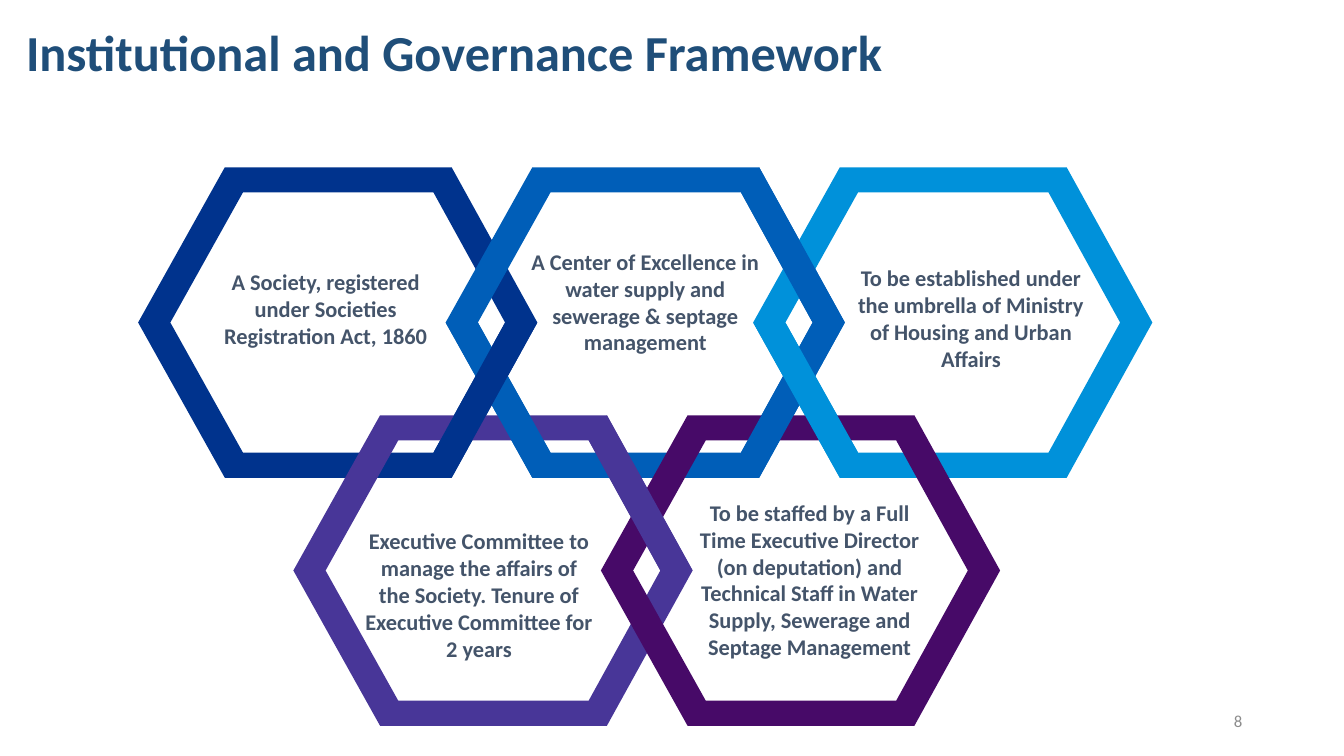
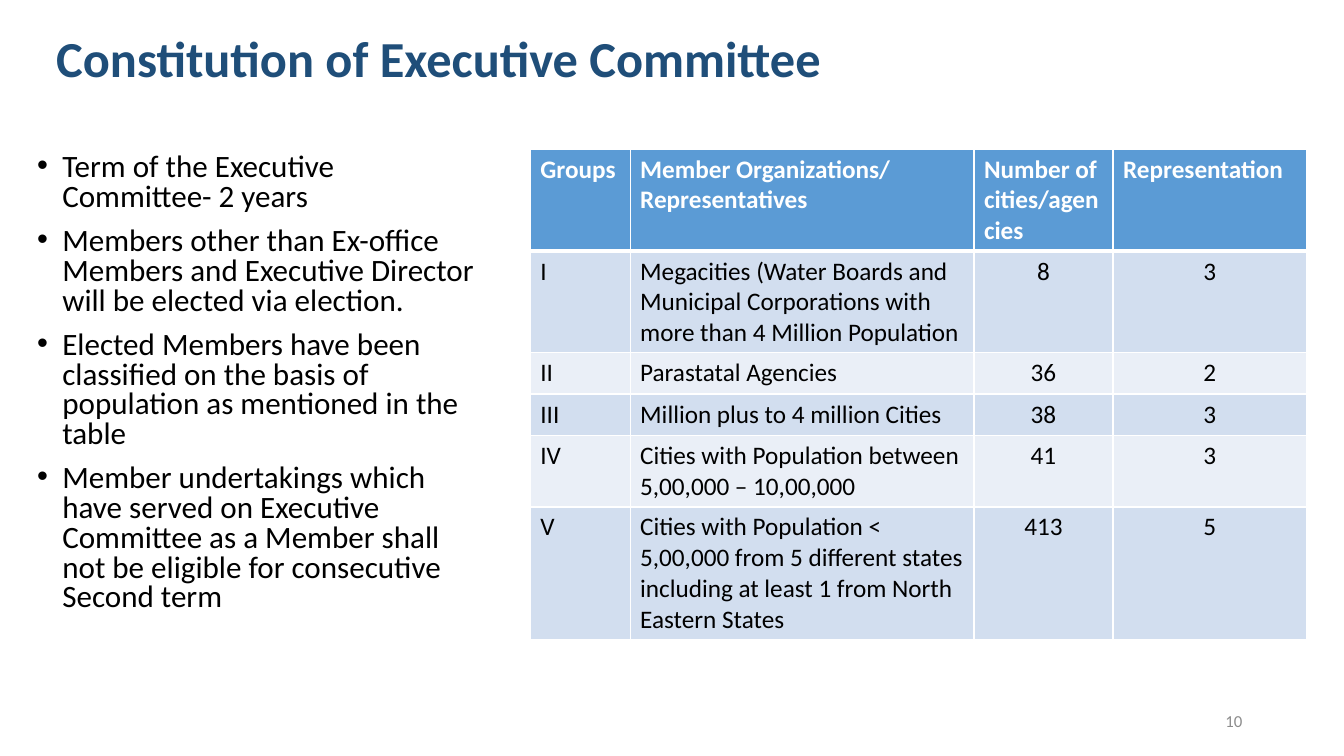
from lxml import etree
from pptx import Presentation
from pptx.dml.color import RGBColor
from pptx.enum import text as t
from pptx.oxml import ns
from pptx.util import Inches, Pt

FONT = "Calibri"
WHITE = RGBColor(0xFF, 0xFF, 0xFF)
BLACK = RGBColor(0x00, 0x00, 0x00)
TITLE_BLUE = RGBColor(0x1F, 0x4E, 0x79)
SLATE = RGBColor(0x44, 0x54, 0x6A)
GRAY = RGBColor(0x8C, 0x8C, 0x8C)
HEADER_BLUE = RGBColor(0x5B, 0x9B, 0xD5)
BAND_DARK = RGBColor(0xD2, 0xDE, 0xEF)
BAND_LIGHT = RGBColor(0xEA, 0xEF, 0xF7)
NAVY = RGBColor(0x00, 0x33, 0x8D)
BLUE = RGBColor(0x00, 0x5E, 0xB8)
SKY = RGBColor(0x00, 0x91, 0xDA)
VIOLET = RGBColor(0x48, 0x36, 0x98)
PURPLE = RGBColor(0x47, 0x0A, 0x68)

LEFT, CENTER, RIGHT = t.PP_ALIGN.LEFT, t.PP_ALIGN.CENTER, t.PP_ALIGN.RIGHT
TOP, MIDDLE = t.MSO_ANCHOR.TOP, t.MSO_ANCHOR.MIDDLE

OUTER = [(0, 1.54), (0.86, 0), (3.11, 0), (3.96, 1.54), (3.11, 3.08), (0.86, 3.08)]
INNER = [(0.32, 1.54), (1.04, 0.25), (2.93, 0.25), (3.64, 1.54), (2.93, 2.83), (1.04, 2.83)]
UPPER_RIGHT, LOWER_RIGHT, LOWER_LEFT = 2, 3, 5

RING_STEP = 3.05
UPPER_ROW = (1.37, 1.66)
LOWER_ROW = (2.91, 4.12)
RINGS = {
    "society": (UPPER_ROW, 0, NAVY),
    "center": (UPPER_ROW, 1, BLUE),
    "ministry": (UPPER_ROW, 2, SKY),
    "committee": (LOWER_ROW, 0, VIOLET),
    "staff": (LOWER_ROW, 1, PURPLE),
}
FRONT_SIDES = [
    ("center", LOWER_LEFT),
    ("society", LOWER_RIGHT),
    ("center", LOWER_RIGHT),
    ("ministry", LOWER_LEFT),
    ("committee", UPPER_RIGHT),
    ("center", UPPER_RIGHT),
]
RING_TEXTS = [
    (2.02, 2.6, 1.38, "A Society, registered under Societies Registration Act, 1860"),
    (5.19, 2.4, 1.38,
     "A Center of Excellence in water supply and sewerage & septage management"),
    (8.42, 2.56, 1.28,
     "To be established under the umbrella of Ministry of Housing and Urban Affairs"),
    (3.54, 5.17, 1.38,
     "Executive Committee to manage the affairs of the Society. "
     "Tenure of Executive Committee for 2 years"),
    (6.82, 4.89, 1.7,
     "To be staffed by a Full Time Executive Director (on deputation) and "
     "Technical Staff in Water Supply, Sewerage and Septage Management"),
]
RULES = [
    "Term of the Executive Committee- 2 years",
    "Members other than Ex-office Members and Executive Director will be elected via election.",
    "Elected Members have been classified on the basis of population as mentioned in the table",
    "Member undertakings which have served on Executive Committee as a Member "
    "shall not be eligible for consecutive Second term",
]
COLUMN_WIDTHS = [0.99, 3.41, 1.38, 1.92]
ROW_HEIGHTS = [1.01, 1.01, 0.41, 0.41, 0.71, 1.32]
GROUPS = [
    ("Groups", "Member Organizations/ Representatives",
     "Number of cities/agencies", "Representation"),
    ("I", "Megacities (Water Boards and Municipal Corporations with "
     "more than 4 Million Population", "8", "3"),
    ("II", "Parastatal Agencies", "36", "2"),
    ("III", "Million plus to 4 million Cities", "38", "3"),
    ("IV", "Cities with Population between 5,00,000 – 10,00,000", "41", "3"),
    ("V", "Cities with Population < 5,00,000 from 5 different states "
     "including at least 1 from North Eastern States", "413", "5"),
]


def write_text(frame, content, size=18, color=BLACK, bold=False, align=LEFT,
               line_spacing=None, before=0, after=0, bullet=None):
    lines = [content] if isinstance(content, str) else content
    frame.word_wrap = True
    for index, line in enumerate(lines):
        paragraph = frame.add_paragraph() if index else frame.paragraphs[0]
        paragraph.alignment = align
        paragraph.space_before = Pt(before)
        paragraph.space_after = Pt(after)
        if line_spacing:
            paragraph.line_spacing = line_spacing
        if bullet:
            add_bullet(paragraph, bullet)
        run = paragraph.add_run()
        run.text = line
        run.font.name = FONT
        run.font.size = Pt(size)
        run.font.bold = bold
        run.font.color.rgb = color


def add_bullet(paragraph, character, indent=0.25):
    properties = paragraph._p.get_or_add_pPr()
    properties.set("marL", str(Inches(indent)))
    properties.set("indent", str(-Inches(indent)))
    etree.SubElement(properties, ns.qn("a:buFont")).set("typeface", "Arial")
    etree.SubElement(properties, ns.qn("a:buChar")).set("char", character)


def add_text(slide, box, content, anchor=TOP, inset=None, **style):
    frame = slide.shapes.add_textbox(*map(Inches, box)).text_frame
    frame.vertical_anchor = anchor
    if inset is not None:
        frame.margin_left = frame.margin_right = Inches(inset)
        frame.margin_top = frame.margin_bottom = Inches(inset)
    write_text(frame, content, **style)


def add_frame_slide(presentation, title, title_box, number):
    slide = presentation.slides.add_slide(presentation.slide_layouts[6])
    add_text(slide, title_box, title, anchor=MIDDLE, size=36,
             color=TITLE_BLUE, bold=True, line_spacing=0.9)
    add_text(slide, (9.42, 6.95, 3, 0.4), number, anchor=MIDDLE,
             size=12, color=GRAY, align=RIGHT)
    return slide


def add_outline(slide, ring, contours):
    (left, top), column, color = RINGS[ring]
    left += column * RING_STEP
    placed = [[(Inches(left + x), Inches(top + y)) for x, y in contour]
              for contour in contours]
    builder = slide.shapes.build_freeform(*placed[0][0])
    builder.add_line_segments(placed[0][1:], close=True)
    for contour in placed[1:]:
        builder.move_to(*contour[0])
        builder.add_line_segments(contour[1:], close=True)
    shape = builder.convert_to_shape()
    shape.shadow.inherit = False
    shape.fill.solid()
    shape.fill.fore_color.rgb = color
    shape.line.fill.background()


def add_ring_side(slide, ring, side):
    following = (side + 1) % len(OUTER)
    add_outline(slide, ring, [[OUTER[side], OUTER[following],
                               INNER[following], INNER[side]]])


def set_border(cell, side, width):
    properties = cell._tc.get_or_add_tcPr()
    line = etree.SubElement(properties, ns.qn(f"a:ln{side}"), w=str(Pt(width)))
    fill = etree.SubElement(line, ns.qn("a:solidFill"))
    etree.SubElement(fill, ns.qn("a:srgbClr"), val=str(WHITE))


def format_cell(cell, content, row, column):
    header = row == 0
    for side in "LRTB":
        thick = (row, side) in ((0, "B"), (1, "T"))
        set_border(cell, side, 3 if thick else 1)
    cell.fill.solid()
    band = BAND_DARK if row % 2 else BAND_LIGHT
    cell.fill.fore_color.rgb = HEADER_BLUE if header else band
    write_text(cell.text_frame, content, bold=header,
               color=WHITE if header else BLACK,
               align=CENTER if column >= 2 and not header else LEFT)


def add_group_table(slide, left, top):
    table = slide.shapes.add_table(
        len(GROUPS), len(COLUMN_WIDTHS), Inches(left), Inches(top),
        Inches(sum(COLUMN_WIDTHS)), Inches(sum(ROW_HEIGHTS))).table
    for column, width in zip(table.columns, COLUMN_WIDTHS):
        column.width = Inches(width)
    for row, height in zip(table.rows, ROW_HEIGHTS):
        row.height = Inches(height)
    for row, values in enumerate(GROUPS):
        for column, value in enumerate(values):
            format_cell(table.cell(row, column), value, row, column)


def build_framework(presentation):
    slide = add_frame_slide(presentation, "Institutional and Governance Framework",
                            (0.16, 0.11, 11.5, 0.87), "8")
    for ring in RINGS:
        add_outline(slide, ring, [OUTER, INNER[::-1]])
    for ring, side in FRONT_SIDES:
        add_ring_side(slide, ring, side)
    for left, top, height, content in RING_TEXTS:
        add_text(slide, (left, top, 2.42, height), content, inset=0.06,
                 size=16, color=SLATE, bold=True, align=CENTER, after=6)


def build_committee(presentation):
    slide = add_frame_slide(presentation, "Constitution of Executive Committee",
                            (0.46, 0.21, 11.5, 0.79), "10")
    add_text(slide, (0.27, 1.48, 4.64, 4.76), RULES, size=22.2,
             line_spacing=0.8, before=10, bullet="•")
    add_group_table(slide, 5.26, 1.48)


def main():
    presentation = Presentation()
    presentation.slide_width = Inches(13.33)
    presentation.slide_height = Inches(7.5)
    build_framework(presentation)
    build_committee(presentation)
    presentation.save("out.pptx")


if __name__ == "__main__":
    main()
